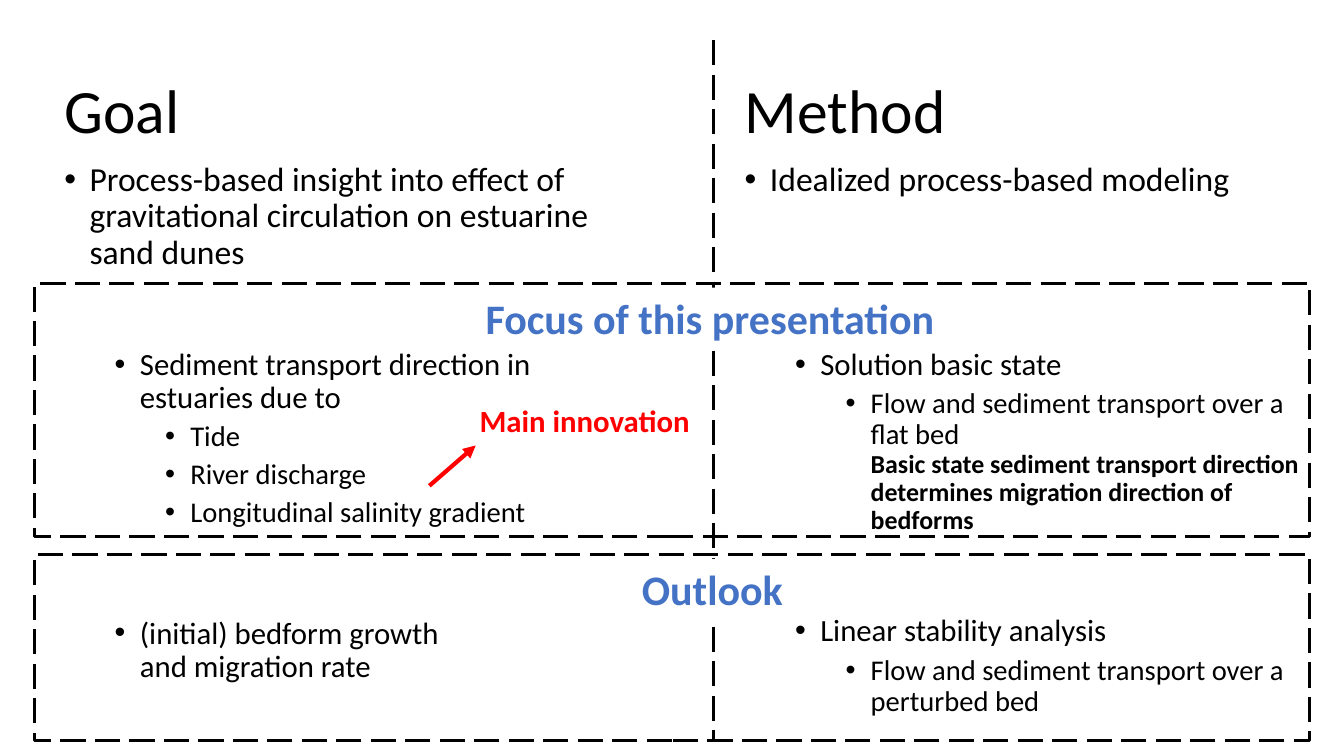
"""Build the Goal and Method slide with its focus and outlook frames."""
from pptx import Presentation
from pptx.dml.color import RGBColor
from pptx.enum.dml import MSO_LINE
from pptx.enum.shapes import MSO_CONNECTOR, MSO_SHAPE
from pptx.enum.text import MSO_ANCHOR, PP_ALIGN
from pptx.oxml.ns import qn
from pptx.util import Pt
from lxml.etree import SubElement

BLACK = RGBColor(0x00, 0x00, 0x00)
WHITE = RGBColor(0xFF, 0xFF, 0xFF)
RED = RGBColor(0xFF, 0x00, 0x00)
BLUE = RGBColor(0x44, 0x72, 0xC4)
FONT = "Calibri"

LEVEL_SIZES = (24, 22, 20.4)
CONCLUSION_SIZE = 18.5
BULLET_INDENT, LEVEL_STEP = 18, 36
GOAL_LEFT, METHOD_LEFT = 38.9, 524.9
COLUMN_WIDTH = 412
TITLE_TOP, TITLE_WIDTH, TITLE_HEIGHT = 28.8, 168.5, 104.4
FRAME_LEFT, FRAME_WIDTH = 24.5, 910.8
DIVIDER_X, DIVIDER_BOTTOM = 509.8, 529.9

TITLES = [("Goal", GOAL_LEFT), ("Method", METHOD_LEFT)]
CONCLUSION = ("Basic state sediment transport direction determines "
              "migration direction of bedforms")
BULLET_GROUPS = [
    (GOAL_LEFT, 112.5, 85, [
        (0, "Process-based insight into effect of gravitational circulation "
            "on estuarine sand dunes")]),
    (GOAL_LEFT, 245.5, 138, [
        (1, "Sediment transport direction in estuaries due to"),
        (2, "Tide"),
        (2, "River discharge"),
        (2, "Longitudinal salinity gradient")]),
    (GOAL_LEFT, 437.5, 60, [
        (1, "(initial) bedform growth \vand migration rate")]),
    (METHOD_LEFT, 112.5, 40, [
        (0, "Idealized process-based modeling")]),
    (METHOD_LEFT, 245.5, 138, [
        (1, "Solution basic state"),
        (2, "Flow and sediment transport over a flat bed\v" + CONCLUSION)]),
    (METHOD_LEFT, 436, 84, [
        (1, "Linear stability analysis"),
        (2, "Flow and sediment transport over a perturbed bed")]),
]
FRAMES = [
    ("Outlook", 396, 133.2, 451.4, 115.9),
    ("Focus of this presentation", 202.3, 180.7, 339.8, 338.4),
]


def style(run, size, color=BLACK, bold=False):
    run.font.name = FONT
    run.font.size = Pt(size)
    run.font.color.rgb = color
    run.font.bold = bold


def add_label(slide, text, left, top, width, height, size, color, bold, wrap=False):
    label = slide.shapes.add_textbox(Pt(left), Pt(top), Pt(width), Pt(height))
    label.text_frame.word_wrap = wrap
    label.text_frame.text = text
    style(label.text_frame.paragraphs[0].runs[0], size, color, bold)
    return label


def add_bullets(slide, left, top, height, items):
    group = slide.shapes.add_textbox(Pt(left), Pt(top), Pt(COLUMN_WIDTH), Pt(height))
    frame = group.text_frame
    frame.word_wrap = True
    frame.text = "\n".join(text.replace("\v", "\v") for _, text in items)
    for paragraph, (level, _) in zip(frame.paragraphs, items):
        paragraph.level = level
        paragraph.line_spacing = 0.9
        paragraph.space_before = Pt(5 if level else 10)
        properties = paragraph._p.get_or_add_pPr()
        properties.set("marL", str(Pt(BULLET_INDENT + level * LEVEL_STEP)))
        properties.set("indent", str(-Pt(BULLET_INDENT)))
        SubElement(properties, qn("a:buFont")).set("typeface", "Arial")
        SubElement(properties, qn("a:buChar")).set("char", "•")
        for run in paragraph.runs:
            concluding = run.text == CONCLUSION
            style(run, CONCLUSION_SIZE if concluding else LEVEL_SIZES[level],
                  bold=concluding)


def add_line(slide, start, end, color, width):
    line = slide.shapes.add_connector(
        MSO_CONNECTOR.STRAIGHT, *(Pt(value) for value in start + end))
    line.line.color.rgb = color
    line.line.width = Pt(width)
    SubElement(line._element.spPr, qn("a:effectLst"))
    return line


def add_frame(slide, heading, top, height, heading_left, heading_width):
    outline = slide.shapes.add_shape(
        MSO_SHAPE.RECTANGLE, Pt(FRAME_LEFT), Pt(top), Pt(FRAME_WIDTH), Pt(height))
    outline.shadow.inherit = False
    outline.fill.background()
    outline.line.color.rgb = BLACK
    outline.line.width = Pt(2.25)
    outline.line.dash_style = MSO_LINE.LONG_DASH
    label = add_label(slide, heading, heading_left, top + 3.2, heading_width, 43.9,
                      30, BLUE, True)
    label.fill.solid()
    label.fill.fore_color.rgb = WHITE
    label.text_frame.paragraphs[0].alignment = PP_ALIGN.LEFT


def main():
    deck = Presentation()
    deck.slide_width, deck.slide_height = Pt(960), Pt(540)
    slide = deck.slides.add_slide(deck.slide_layouts[6])

    for text, left in TITLES:
        title = add_label(slide, text, left, TITLE_TOP, TITLE_WIDTH, TITLE_HEIGHT,
                          44, BLACK, False, wrap=True)
        title.text_frame.vertical_anchor = MSO_ANCHOR.MIDDLE
        title.text_frame.paragraphs[0].line_spacing = 0.9
    for group in BULLET_GROUPS:
        add_bullets(slide, *group)

    arrow = add_line(slide, (306.7, 347), (339.8, 318.2), RED, 3)
    SubElement(arrow.line._get_or_add_ln(), qn("a:tailEnd")).set("type", "triangle")
    add_label(slide, "Main innovation", 335.5, 283.7, 166.3, 33.8, 22, RED, True)

    divider = add_line(slide, (DIVIDER_X, TITLE_TOP), (DIVIDER_X, DIVIDER_BOTTOM),
                       BLACK, 2.25)
    divider.line.dash_style = MSO_LINE.LONG_DASH
    for frame in FRAMES:
        add_frame(slide, *frame)

    deck.save("out.pptx")


if __name__ == "__main__":
    main()
